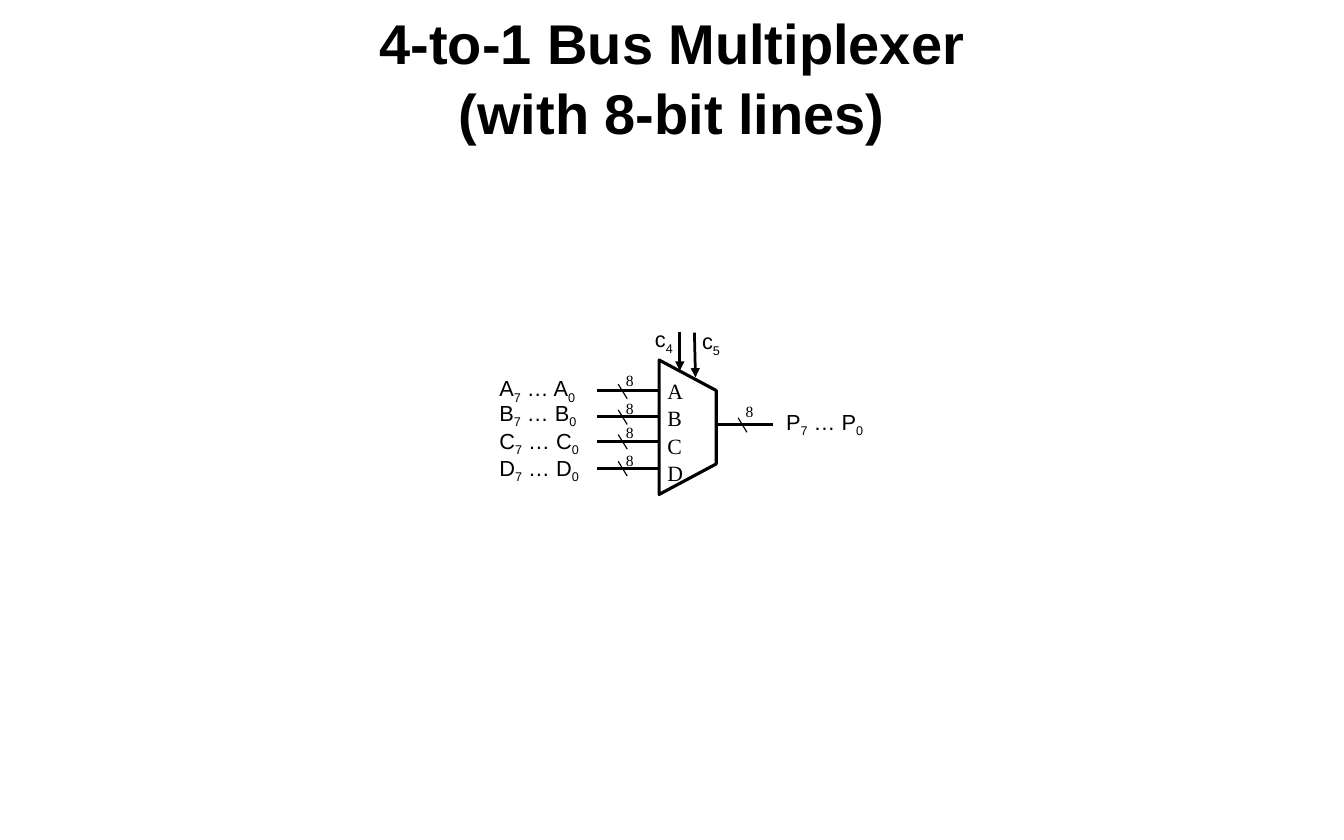
from lxml import etree
from pptx import Presentation
from pptx import util as u
from pptx.dml.color import RGBColor
from pptx.enum import shapes, text
from pptx.oxml.ns import qn

BLACK, WHITE = "000000", "FFFFFF"
SANS, SERIF = "Arial", "Times New Roman"


def paint(color_format, color):
    color_format.rgb = RGBColor.from_string(color)


def add_run(paragraph, words, size, font, bold=False, subscript=False):
    run = paragraph.add_run()
    run.text = words
    run.font.size, run.font.name, run.font.bold = u.Pt(size), font, bold
    paint(run.font.color, BLACK)
    if subscript:
        run.font._element.set("baseline", "-25000")


def add_wire(parts, start, end, width, arrow=False):
    wire = parts.add_connector(shapes.MSO_CONNECTOR.STRAIGHT,
                               *map(u.Inches, start + end))
    paint(wire.line.color, BLACK)
    wire.line.width = u.Pt(width)
    if arrow:
        etree.SubElement(wire.line._get_or_add_ln(), qn("a:tailEnd"), type="triangle")
    etree.SubElement(wire._element.spPr, qn("a:effectLst"))


def add_label(parts, box, runs, size, font):
    label = parts.add_textbox(*map(u.Inches, box))
    frame = label.text_frame
    frame.word_wrap = False
    frame.auto_size = text.MSO_AUTO_SIZE.SHAPE_TO_FIT_TEXT
    for words, subscript in runs:
        add_run(frame.paragraphs[0], words, size, font, subscript=subscript)


def add_bus_name(parts, box, letter):
    runs = [(letter, False), ("7", True), (f" … {letter}", False), ("0", True)]
    add_label(parts, box, runs, 14, SANS)


def add_bus(parts, start, end, slash, count):
    add_wire(parts, start, end, 2)
    add_wire(parts, slash, (slash[0] + 0.08, slash[1] + 0.13), 0.75)
    add_label(parts, (*count, 0.27, 0.27), [("8", False)], 10, SERIF)


def add_title(slide, box):
    title = slide.shapes.title
    title.left, title.top, title.width, title.height = map(u.Inches, box)
    frame = title.text_frame
    frame.vertical_anchor = text.MSO_ANCHOR.MIDDLE
    heading = frame.paragraphs[0]
    heading.alignment = text.PP_ALIGN.CENTER
    heading.line_spacing = 1.04
    add_run(heading, "4-to-1 Bus Multiplexer", 36, SANS, bold=True)
    heading.add_line_break()
    add_run(heading, "(with 8-bit lines)", 36, SANS, bold=True)


def add_body(parts, left, top):
    body = parts.add_shape(shapes.MSO_SHAPE.TRAPEZOID, u.Inches(left + 1.18),
                           u.Inches(top + 0.7), u.Inches(1.2), u.Inches(0.51))
    body.rotation = 90
    body.adjustments[0] = 0.534
    body.shadow.inherit = False
    body.fill.solid()
    paint(body.fill.fore_color, WHITE)
    paint(body.line.color, BLACK)
    body.line.width = u.Pt(2)


def add_port_letters(parts, left, top):
    ports = parts.add_textbox(u.Inches(left + 1.5), u.Inches(top + 0.45),
                              u.Inches(0.48), u.Inches(1.1)).text_frame
    ports.word_wrap = True
    for row, letter in enumerate("ABCD"):
        port = ports.add_paragraph() if row else ports.paragraphs[0]
        port.line_spacing = 1.05
        add_run(port, letter, 14, SERIF)


def add_inputs(parts, left, top):
    rows = [("A", 0.63, 0.44, 0.4), ("B", 0.86, 0.66, 0.65),
            ("C", 1.08, 0.91, 0.87), ("D", 1.32, 1.15, 1.12)]
    for letter, wire_y, name_y, count_y in rows:
        y = top + wire_y
        add_bus(parts, (left + 0.97, y), (left + 1.52, y),
                (left + 1.16, y - 0.06), (left + 1.13, top + count_y))
        add_bus_name(parts, (left, top + name_y, 0.94, 0.34), letter)


def add_output(parts, left, top):
    y = top + 0.93
    add_bus(parts, (left + 2.04, y), (left + 2.54, y),
            (left + 2.23, y - 0.06), (left + 2.2, top + 0.68))
    add_bus_name(parts, (left + 2.56, top + 0.74, 0.95, 0.34), "P")


def add_controls(parts, left, top):
    controls = [("4", (1.71, 0.1), (1.71, 0.45), (1.39, 0)),
                ("5", (1.84, 0.11), (1.85, 0.51), (1.81, 0.02))]
    for digit, *points in controls:
        start, end, name = [(left + x, top + y) for x, y in points]
        add_wire(parts, start, end, 1.75, arrow=True)
        add_label(parts, (*name, 0.37, 0.34), [("c", False), (digit, True)], 14, SANS)


def add_multiplexer(slide, left, top):
    parts = slide.shapes.add_group_shape().shapes
    for add_part in (add_body, add_port_letters, add_inputs, add_output, add_controls):
        add_part(parts, left, top)


def main():
    deck = Presentation()
    deck.slide_width, deck.slide_height = u.Inches(12), u.Inches(7.5)
    slide = deck.slides.add_slide(deck.slide_layouts[5])
    add_multiplexer(slide, 4.36, 2.86)
    add_title(slide, (1, 0.01, 10, 1.33))
    deck.save("out.pptx")


if __name__ == "__main__":
    main()
